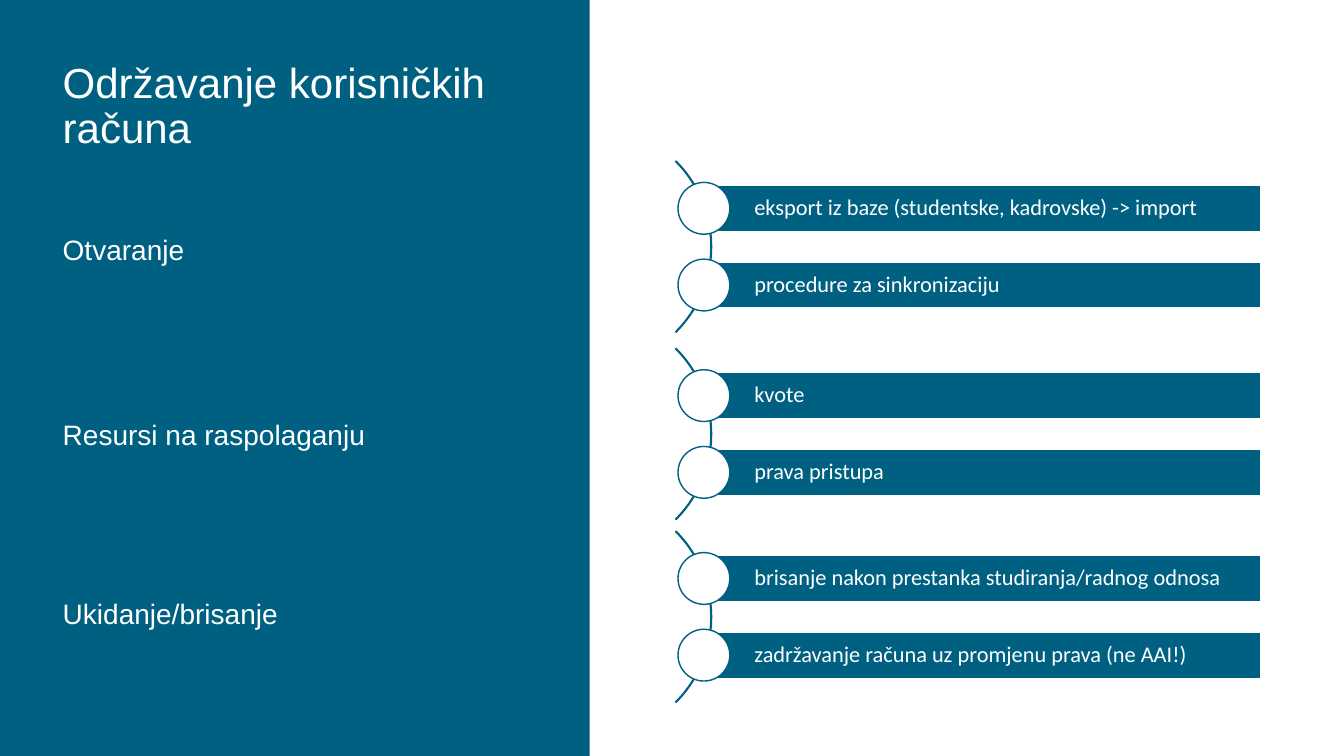
import pptx
import pptx.util
import pptx.dml.color
import pptx.enum.shapes
import pptx.enum.text
import lxml.etree

Pt = pptx.util.Pt
SHAPE = pptx.enum.shapes.MSO_SHAPE
ANCHOR = pptx.enum.text.MSO_ANCHOR
LEFT = pptx.enum.text.PP_ALIGN.LEFT

COLORS = {"teal": "006081", "paper": "FEFFFE", "white": "FFFFFF"}
TITLE = "Održavanje korisničkih računa"
TOPICS = [
    {"name": "Otvaranje", "space_before": 0, "center": 176.2,
     "steps": ["eksport iz baze (studentske, kadrovske) -> import",
               "procedure za sinkronizaciju"]},
    {"name": "Resursi na raspolaganju", "space_before": 108.3, "center": 310,
     "steps": ["kvote", "prava pristupa"]},
    {"name": "Ukidanje/brisanje", "space_before": 103.4, "center": 440.6,
     "steps": ["brisanje nakon prestanka studiranja/radnog odnosa",
               "zadržavanje računa uz promjenu prava (ne AAI!)"]},
]

SLIDE_W, SLIDE_H = 960, 540
PANEL_W = 421.2
TEXT_LEFT, TEXT_W = 37.6, 344.2
ARC_LEFT, ARC_SIZE = 335.5, 172.8
BAR_LEFT, BAR_W, BAR_H = 502.8, 397.4, 33
STEP_GAP = 54.8
DOT = 37


def rgb(name):
    return pptx.dml.color.RGBColor.from_string(COLORS[name])


def add_figure(kind, left, top, width, height, fill, line=None):
    figure = slide.shapes.add_shape(kind, Pt(left), Pt(top), Pt(width), Pt(height))
    figure.shadow.inherit = False
    figure.fill.solid()
    figure.fill.fore_color.rgb = rgb(fill)
    if line:
        figure.line.color.rgb = rgb(line)
        figure.line.width = Pt(1)
    else:
        figure.line.fill.background()
    return figure


def place(holder, top, height, anchor):
    holder.left, holder.top = Pt(TEXT_LEFT), Pt(top)
    holder.width, holder.height = Pt(TEXT_W), Pt(height)
    frame = holder.text_frame
    frame.word_wrap = True
    frame.auto_size = pptx.enum.text.MSO_AUTO_SIZE.NONE
    frame.vertical_anchor = anchor
    return frame


def write(paragraph, text, size, font, color, spacing):
    paragraph.alignment = LEFT
    paragraph.line_spacing = spacing
    run = paragraph.add_run()
    run.text = text
    run.font.size = Pt(size)
    run.font.name = font
    run.font.color.rgb = rgb(color)


deck = pptx.Presentation()
deck.slide_width, deck.slide_height = Pt(SLIDE_W), Pt(SLIDE_H)
slide = deck.slides.add_slide(deck.slide_layouts[1])
slide.background.fill.solid()
slide.background.fill.fore_color.rgb = rgb("paper")

panel = add_figure(SHAPE.RECTANGLE, 0, 0, PANEL_W, SLIDE_H, "teal")
slide.shapes.title._element.addprevious(panel._element)

heading = place(slide.shapes.title, 37.6, 75, ANCHOR.BOTTOM)
write(heading.paragraphs[0], TITLE, 30, "Arial", "paper", 0.9)

topics = place(slide.placeholders[1], 162.5, 340, ANCHOR.TOP)
for index, topic in enumerate(TOPICS):
    paragraph = topics.add_paragraph() if index else topics.paragraphs[0]
    properties = paragraph._p.get_or_add_pPr()
    properties.set("marL", "0")
    properties.set("indent", "0")
    lxml.etree.SubElement(properties, pptx.oxml.ns.qn("a:buNone"))
    paragraph.space_before = Pt(topic["space_before"])
    write(paragraph, topic["name"], 20, "Arial", "white", 1.0)

    arc = add_figure(SHAPE.BLOCK_ARC, ARC_LEFT, topic["center"] - ARC_SIZE / 2,
                     ARC_SIZE, ARC_SIZE, "paper", "teal")
    for position, value in enumerate((189, 27, 0.003)):
        arc.adjustments[position] = value

    first_center = topic["center"] - STEP_GAP * (len(topic["steps"]) - 1) / 2
    for row, step in enumerate(topic["steps"]):
        middle = first_center + row * STEP_GAP
        bar = add_figure(SHAPE.RECTANGLE, BAR_LEFT, middle - BAR_H / 2,
                         BAR_W, BAR_H, "teal", "paper")
        label = bar.text_frame
        label.word_wrap = True
        label.vertical_anchor = ANCHOR.MIDDLE
        label.margin_left = Pt(36)
        label.margin_top = label.margin_right = label.margin_bottom = Pt(3)
        write(label.paragraphs[0], step, 16, "Calibri", "paper", 0.9)
        add_figure(SHAPE.OVAL, BAR_LEFT - DOT / 2, middle - DOT / 2,
                   DOT, DOT, "paper", "teal")

deck.save("out.pptx")
